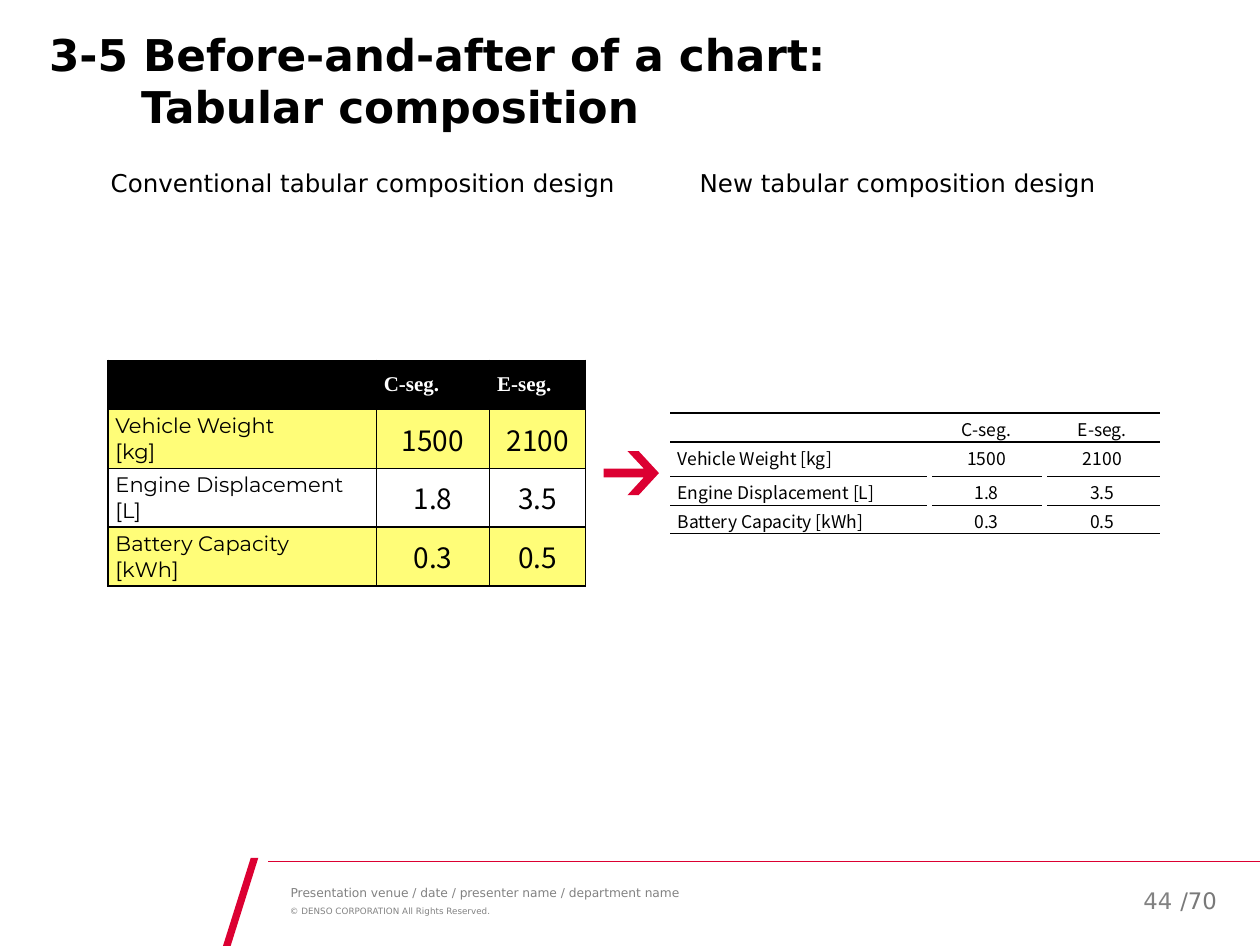
from lxml.etree import SubElement
from pptx import Presentation
from pptx.dml.color import RGBColor
from pptx.enum.shapes import MSO_CONNECTOR as Connector
from pptx.enum.text import MSO_ANCHOR as Anchor, MSO_AUTO_SIZE as AutoSize, PP_ALIGN as Align
from pptx.oxml.ns import qn
from pptx.util import Pt

SANS, CJK = "DejaVu Sans", "Noto Sans CJK JP"
RED, GRAY, BLACK, WHITE, YELLOW = "DC0032", "828282", "000000", "FFFFFF", "FFFD78"
WIDTH, HEIGHT = 720, 540.72

TITLE = "3-5 Before-and-after of a chart:\vTabular composition"
SEGMENTS = ["C-seg.", "E-seg."]
SPECS = [
    ("Vehicle Weight", "[kg]", "1500", "2100"),
    ("Engine Displacement", "[L]", "1.8", "3.5"),
    ("Battery Capacity", "[kWh]", "0.3", "0.5"),
]
TEXTS = [
    ("Conventional tabular composition design", (56.2, 90.7, 304.6, 25.9),
     dict(size=14, spacing=1.1)),
    ("New tabular composition design", (391.7, 90.7, 242.6, 25.9),
     dict(size=14, spacing=1.1, align=Align.CENTER)),
    ("Presentation venue / date / presenter name / department name",
     (166.1, 506.2, 453.6, 8.6), dict(size=7, color=GRAY, margins=(0, 0, 0, 0))),
    ("© DENSO CORPORATION All Rights Reserved.",
     (165.6, 517.7, 453.6, 5.8), dict(size=5, color=GRAY, margins=(0, 0, 0, 0))),
    ("44 ", (600.5, 500.4, 80.6, 28.8),
     dict(size=13, color=GRAY, align=Align.RIGHT, anchor=Anchor.MIDDLE, wrap=True)),
    ("/70", (667.4, 503.3, 37.4, 23),
     dict(size=13, color="797979", anchor=Anchor.MIDDLE)),
]
SLASH = [(147.6, 490.3), (143.3, 490.3), (127.4, HEIGHT), (131.8, HEIGHT)]
ARROW = [(365, 257.8), (358.6, 257.8), (367.9, 267.8), (344.9, 267.8), (344.9, 272.9),
         (367.9, 272.9), (358.6, 283), (365, 283), (376.6, 270.4)]
COLUMNS_BEFORE, ROWS_BEFORE = [153.3, 64.8, 54.8], [28, 33.7, 33.7, 33.7]
COLUMNS_AFTER, ROWS_AFTER = [147.6, 66.2, 66.2], [16.5, 19.5, 16.5, 16.5]


def rgb(value):
    return RGBColor.from_string(value)


def write(frame, text, size=14, font=SANS, color=BLACK, bold=False, align=Align.LEFT,
          spacing=None, anchor=Anchor.TOP, margins=(7.2, 3.6, 7.2, 3.6), wrap=False):
    frame.word_wrap = wrap
    frame.auto_size = AutoSize.NONE
    frame.vertical_anchor = anchor
    frame.margin_left, frame.margin_top, frame.margin_right, frame.margin_bottom = map(Pt, margins)
    fill_paragraphs(frame, text, size, font, color, bold, align, spacing)


def fill_paragraphs(frame, text, size, font, color, bold=False, align=Align.LEFT, spacing=None):
    for index, line in enumerate(text.split("\n")):
        paragraph = frame.add_paragraph() if index else frame.paragraphs[0]
        paragraph.alignment = align
        if spacing:
            paragraph.line_spacing = spacing
        if not line:
            SubElement(paragraph._p, qn("a:endParaRPr"), sz=str(size * 100))
            continue
        for part_index, part in enumerate(line.split("\v")):
            if part_index:
                paragraph.add_line_break()
            run = paragraph.add_run()
            run.text = part
            run.font.size, run.font.name, run.font.bold = Pt(size), font, bold
            run.font.color.rgb = rgb(color)


def add_line(slide, start, end, color, width):
    line = slide.shapes.add_connector(Connector.STRAIGHT, *map(Pt, start + end))
    line.line.color.rgb = rgb(color)
    line.line.width = Pt(width)
    SubElement(line._element.spPr, qn("a:effectLst"))


def add_outline(slide, points):
    corners = [(Pt(x), Pt(y)) for x, y in points]
    builder = slide.shapes.build_freeform(*corners[0], scale=1.0)
    builder.add_line_segments(corners[1:], close=True)
    shape = builder.convert_to_shape()
    shape.shadow.inherit = False
    shape.fill.solid()
    shape.fill.fore_color.rgb = rgb(RED)
    shape.line.fill.background()


def set_borders(cell, widths):
    properties = cell._tc.get_or_add_tcPr()
    for side, width in zip("LRTB", widths):
        border = SubElement(properties, qn(f"a:ln{side}"), w=str(Pt(width)))
        if width:
            fill = SubElement(border, qn("a:solidFill"))
            SubElement(fill, qn("a:srgbClr"), val=BLACK)
        else:
            SubElement(border, qn("a:noFill"))


def add_grid(slide, left, top, columns, rows, values, style):
    table = slide.shapes.add_table(len(rows), len(columns), Pt(left), Pt(top),
                                   Pt(sum(columns)), Pt(sum(rows))).table
    table.first_row = table.horz_banding = False
    for column, width in zip(table.columns, columns):
        column.width = Pt(width)
    for row, height in zip(table.rows, rows):
        row.height = Pt(height)
    for r, row_values in enumerate(values):
        for c, text in enumerate(row_values):
            look = style(r, c)
            cell = table.cell(r, c)
            cell.vertical_anchor = look["anchor"]
            cell.margin_left = cell.margin_right = Pt(4.3)
            cell.margin_top, cell.margin_bottom = Pt(2), Pt(look["bottom"])
            set_borders(cell, look["borders"])
            if look["fill"]:
                cell.fill.solid()
                cell.fill.fore_color.rgb = rgb(look["fill"])
            else:
                cell.fill.background()
            fill_paragraphs(cell.text_frame, text, **look["text"])


def style_before(row, column):
    if row == 0:
        fill = BLACK
        text = dict(size=12, font="Times New Roman", color=WHITE, bold=True)
    else:
        fill = YELLOW if row % 2 else WHITE
        text = dict(size=12, font="Montserrat", color=BLACK)
        if column:
            text = dict(size=16, font=CJK, color=BLACK, align=Align.CENTER)
    return dict(anchor=Anchor.MIDDLE, bottom=2, borders=(1, 1, 1, 1), fill=fill, text=text)


def style_after(row, column):
    top = 1.5 if row < 2 else 0.25
    bottom = 1.5 if row == 0 else 0.25
    align = Align.CENTER if column else Align.LEFT
    return dict(anchor=Anchor.TOP, bottom=0, borders=(0, 0, top, bottom), fill=None,
                text=dict(size=10, font=CJK, color=BLACK, align=align))


def main():
    presentation = Presentation()
    presentation.slide_width, presentation.slide_height = Pt(WIDTH), Pt(HEIGHT)
    slide = presentation.slides.add_slide(presentation.slide_layouts[5])

    title = slide.shapes.title
    title.left, title.top, title.width, title.height = map(Pt, (0, 15.8, WIDTH, 28))
    write(title.text_frame, TITLE, size=25, bold=True, margins=(28, 0, 113, 0), wrap=True)
    indent = title.text_frame.paragraphs[0]._p.get_or_add_pPr()
    indent.set("marL", str(Pt(52.6)))
    indent.set("indent", str(-Pt(52.6)))

    add_line(slide, (153.4, 492.5), (WIDTH, 492.5), RED, 0.5)
    add_outline(slide, SLASH)
    for text, box, look in TEXTS:
        write(slide.shapes.add_textbox(*map(Pt, box)).text_frame, text, **look)

    header = ["", *SEGMENTS]
    before = [header] + [[f"{name}\n{unit}", *values] for name, unit, *values in SPECS]
    after = [header] + [[f"{name} {unit}", *values] for name, unit, *values in SPECS]
    add_grid(slide, 61.7, 206, COLUMNS_BEFORE, ROWS_BEFORE, before, style_before)
    add_outline(slide, ARROW)
    add_grid(slide, 383, 236, COLUMNS_AFTER, ROWS_AFTER, after, style_after)
    for x in (531.2, 596.9):
        add_line(slide, (x, 255), (x, 302), WHITE, 3)

    presentation.save("out.pptx")


if __name__ == "__main__":
    main()
